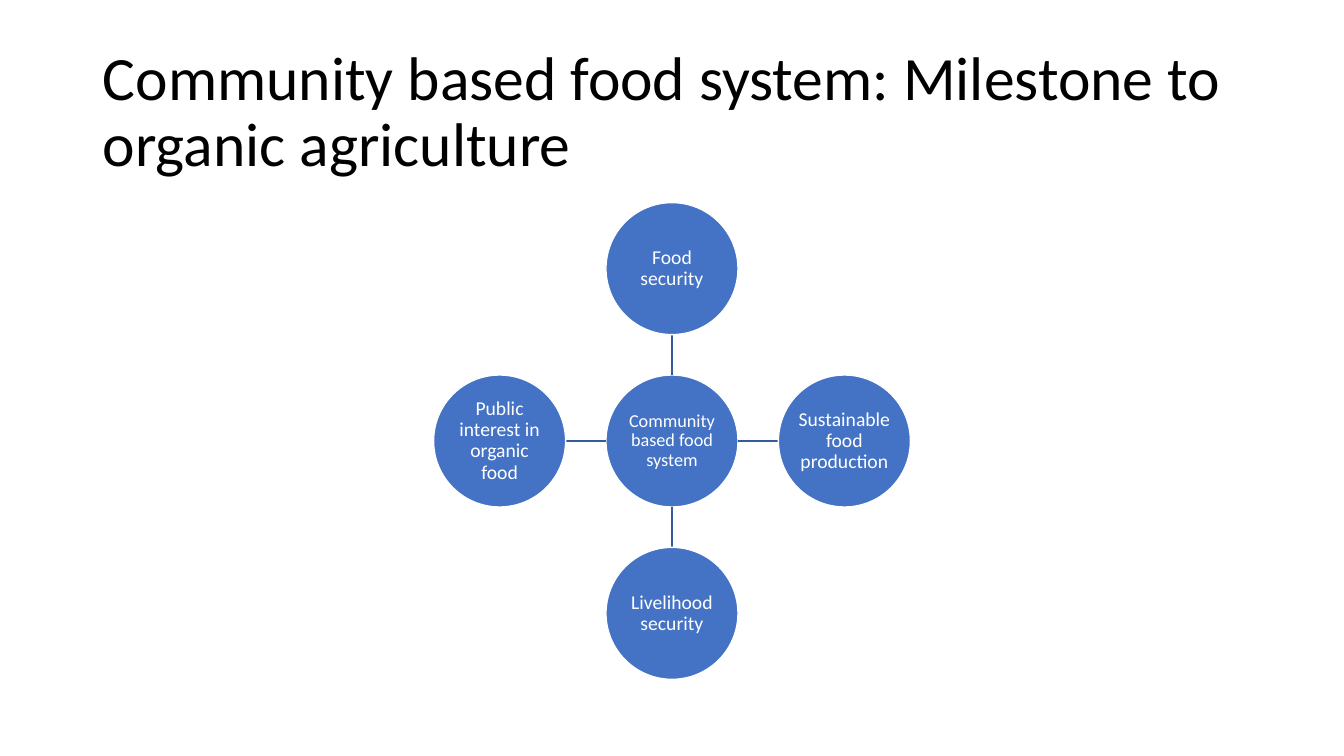
from lxml import etree
from pptx import Presentation
from pptx.dml.color import RGBColor
from pptx.enum.shapes import MSO_CONNECTOR, MSO_SHAPE
from pptx.enum.text import MSO_ANCHOR, MSO_AUTO_SIZE, PP_ALIGN
from pptx.oxml.ns import qn
from pptx.util import Inches, Pt

TITLE = "Community based food system: Milestone to organic agriculture"
HUB = ("Community based food system", 0, 0, 13)
SPOKES = [
    ("Food security", 0, -1, 14),
    ("Sustainable food production", 1, 0, 14),
    ("Livelihood security", 0, 1, 14),
    ("Public interest in organic food", -1, 0, 14),
]

WIDTH, HEIGHT = 13.33, 7.5
CENTER_X, CENTER_Y = WIDTH / 2, HEIGHT * 7 / 12
DIAMETER, STEP = 1.31, 1.71
RADIUS = DIAMETER / 2
FONT = "Calibri"
BLACK = RGBColor(0x00, 0x00, 0x00)
WHITE = RGBColor(0xFF, 0xFF, 0xFF)
BLUE = RGBColor(0x44, 0x72, 0xC4)
LINE_BLUE = RGBColor(0x36, 0x5B, 0x9D)
OVAL, STRAIGHT = MSO_SHAPE.OVAL, MSO_CONNECTOR.STRAIGHT
MIDDLE, NO_FIT = MSO_ANCHOR.MIDDLE, MSO_AUTO_SIZE.NONE
LEFT, CENTER = PP_ALIGN.LEFT, PP_ALIGN.CENTER


def set_text(shape, text, size, color, align):
    tf = shape.text_frame
    tf.text = text
    tf.word_wrap = True
    tf.auto_size = NO_FIT
    tf.vertical_anchor = MIDDLE
    p = tf.paragraphs[0]
    p.alignment = align
    p.line_spacing = 0.9
    p.font.name = FONT
    p.font.size = Pt(size)
    p.font.color.rgb = color
    return tf


def add_circle(s, text, dx, dy, size):
    left = CENTER_X + dx * STEP - RADIUS
    top = CENTER_Y + dy * STEP - RADIUS
    sp = s.shapes.add_shape(OVAL, Inches(left), Inches(top), Inches(DIAMETER), Inches(DIAMETER))
    sp.shadow.inherit = False
    sp.fill.solid()
    sp.fill.fore_color.rgb = BLUE
    sp.line.color.rgb = WHITE
    sp.line.width = Pt(1)
    tf = set_text(sp, text, size, WHITE, CENTER)
    tf.margin_left = tf.margin_right = tf.margin_top = tf.margin_bottom = 0


def add_link(s, dx, dy):
    near, far = RADIUS, STEP - RADIUS
    line = s.shapes.add_connector(
        STRAIGHT,
        Inches(CENTER_X + dx * near), Inches(CENTER_Y + dy * near),
        Inches(CENTER_X + dx * far), Inches(CENTER_Y + dy * far),
    )
    line.line.color.rgb = LINE_BLUE
    line.line.width = Pt(1)
    etree.SubElement(line._element.spPr, qn("a:effectLst"))


def main():
    prs = Presentation()
    prs.slide_width, prs.slide_height = Inches(WIDTH), Inches(HEIGHT)
    s = prs.slides.add_slide(prs.slide_layouts.get_by_name("Title Only"))
    title = s.shapes.title
    title.left, title.top = Inches(0.92), Inches(0.4)
    title.width, title.height = Inches(11.5), Inches(1.45)
    set_text(title, TITLE, 44, BLACK, LEFT)
    add_circle(s, *HUB)
    for text, dx, dy, size in SPOKES:
        add_link(s, dx, dy)
        add_circle(s, text, dx, dy, size)
    prs.save("out.pptx")


if __name__ == "__main__":
    main()
